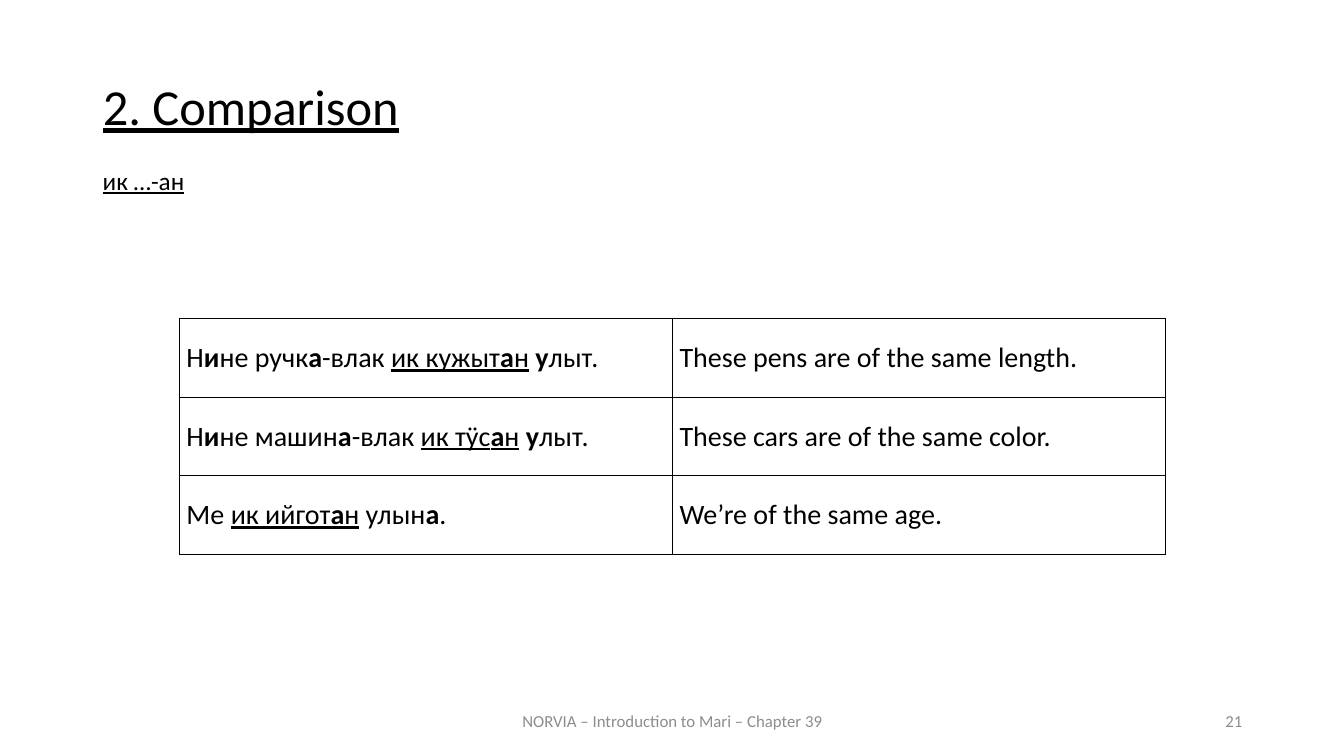
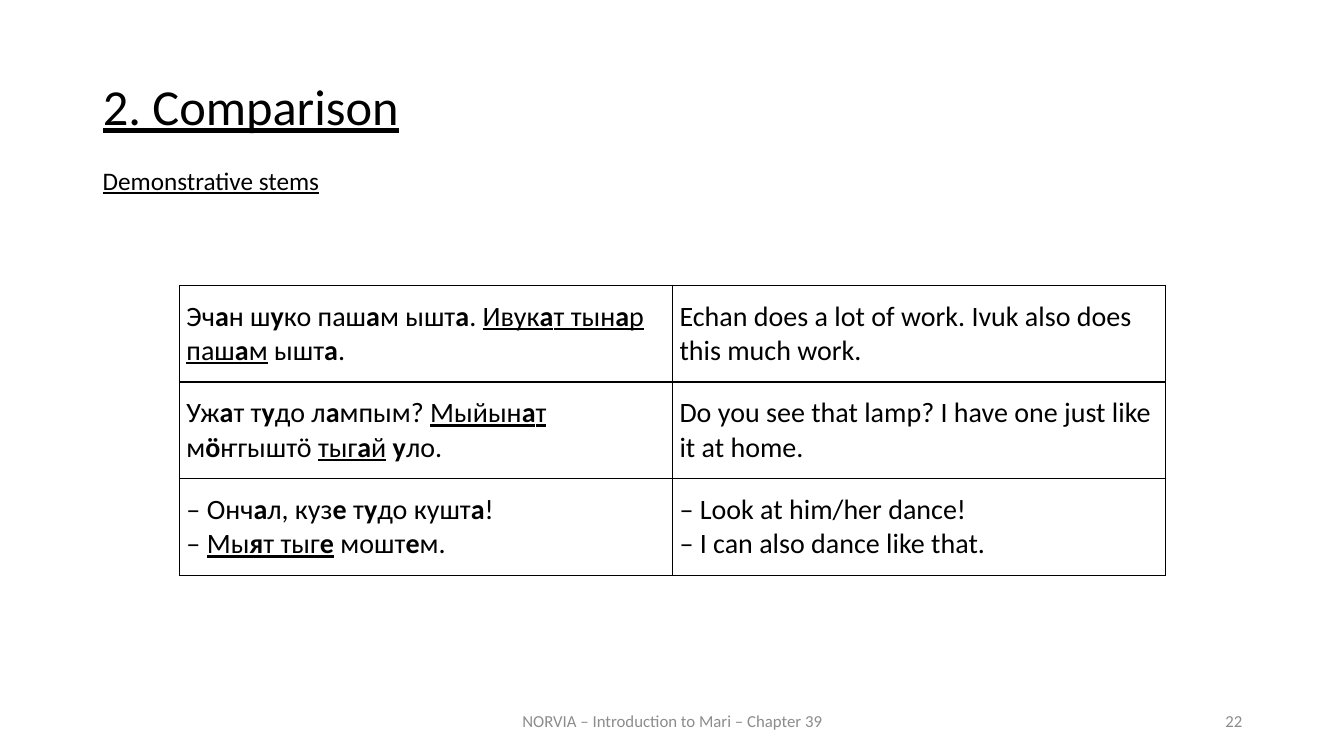
from lxml.etree import SubElement
from pptx import Presentation
from pptx.dml.color import RGBColor as Rgb
from pptx.enum.text import MSO_ANCHOR as Anchor, MSO_AUTO_SIZE as Fit, PP_ALIGN as Align
from pptx.oxml.ns import qn
from pptx.util import Inches, Pt

FONT, INK, GREY = "Calibri", "000000", "8C8C8C"
LEFT, WIDE = 0.92, 11.5
HEAD = "2. Comparison"
FOOT = "NORVIA – Introduction to Mari – Chapter 39"
FIRST = 21
SIDES = ("a:lnL", "a:lnR", "a:lnT", "a:lnB")

SLIDES = [
    ("ик …-ан", 3.16, 0.78, [
        ("Н*и*не ручк*а*-влак _ик кужыт*а*н_ *у*лыт.",
         "These pens are of the same length."),
        ("Н*и*не машин*а*-влак _ик тӱс*а*н_ *у*лыт.",
         "These cars are of the same color."),
        ("Ме _ик ийгот*а*н_ улын*а*.",
         "We’re of the same age."),
    ]),
    ("Demonstrative stems", 2.83, 0.96, [
        ("Эч*а*н ш*у*ко паш*а*м ышт*а*. _Ивук*а*т тын*а*р паш*а*м_ ышт*а*.",
         "Echan does a lot of work. Ivuk also does this much work."),
        ("Уж*а*т т*у*до л*а*мпым? _Мыйын*а*т_ м*ӧ*ҥгыштӧ _тыг*а*й_ *у*ло.",
         "Do you see that lamp? I have one just like it at home."),
        ("– Онч*а*л, куз*е* т*у*до кушт*а*!\n– _Мы*я*т тыг*е*_ мошт*е*м.",
         "– Look at him/her dance!\n– I can also dance like that."),
    ]),
]


def add_run(para, text, size, color=INK, bold=False, under=False):
    """Add one formatted run to a paragraph."""
    run = para.add_run()
    run.text = text
    font = run.font
    font.name, font.size = FONT, Pt(size)
    font.bold, font.underline = bold, under
    font.color.rgb = Rgb.from_string(color)


def add_marked(para, text, size):
    """Add runs from text where *...* is bold and _..._ is underlined."""
    for i, part in enumerate(text.split("_")):
        for j, bit in enumerate(part.split("*")):
            if bit:
                add_run(para, bit, size, bold=j % 2 == 1, under=i % 2 == 1)


def add_title(slide):
    """Fill and place the title placeholder."""
    title = slide.shapes.title
    title.left, title.top = Inches(LEFT), Inches(0.76)
    title.width, title.height = Inches(WIDE), Inches(0.83)
    frame = title.text_frame
    frame.vertical_anchor, frame.auto_size = Anchor.TOP, Fit.NONE
    para = frame.paragraphs[0]
    para.alignment, para.line_spacing, para.space_before = Align.LEFT, 0.9, Pt(12)
    add_run(para, HEAD, 36, under=True)


def add_label(slide, text, left, top, width, size, color=INK,
              align=Align.LEFT, anchor=Anchor.TOP, under=False):
    """Add a one-line text box."""
    box = slide.shapes.add_textbox(Inches(left), Inches(top), Inches(width), Inches(0.4))
    frame = box.text_frame
    frame.word_wrap, frame.vertical_anchor = True, anchor
    para = frame.paragraphs[0]
    para.alignment = align
    add_run(para, text, size, color, under=under)


def add_footer(slide, number):
    """Add the course line and the slide number."""
    add_label(slide, FOOT, 4.42, 6.95, 4.5, 12, GREY, Align.CENTER, Anchor.MIDDLE)
    add_label(slide, str(number), 9.42, 6.95, 3, 12, GREY, Align.RIGHT, Anchor.MIDDLE)


def set_border(cell):
    """Draw a thin line on all four sides of a cell."""
    props = cell._tc.get_or_add_tcPr()
    for pos, side in enumerate(SIDES):
        line = SubElement(props, qn(side), w=str(Pt(1)))
        fill = SubElement(line, qn("a:solidFill"))
        SubElement(fill, qn("a:srgbClr"), val=INK)
        props.remove(line)
        props.insert(pos, line)


def fill_cell(cell, text):
    """Format a cell and write its marked lines."""
    cell.fill.background()
    set_border(cell)
    cell.vertical_anchor = Anchor.MIDDLE
    cell.margin_left = cell.margin_right = Inches(0.07)
    cell.margin_top = cell.margin_bottom = 0
    frame = cell.text_frame
    for i, line in enumerate(text.split("\n")):
        para = frame.add_paragraph() if i else frame.paragraphs[0]
        add_marked(para, line, 20)


def add_pairs(slide, top, high, pairs):
    """Add the table of sentences and translations."""
    table = slide.shapes.add_table(
        len(pairs), 2, Inches(1.78), Inches(top),
        Inches(9.78), Inches(high * len(pairs))).table
    table.first_row = table.horz_banding = False
    for r, pair in enumerate(pairs):
        table.rows[r].height = Inches(high)
        for c, text in enumerate(pair):
            fill_cell(table.cell(r, c), text)


def main():
    """Build and save the slides."""
    prs = Presentation()
    prs.slide_width, prs.slide_height = Inches(13.33), Inches(7.5)
    for number, (topic, top, high, pairs) in enumerate(SLIDES, FIRST):
        slide = prs.slides.add_slide(prs.slide_layouts.get_by_name("Title Only"))
        add_title(slide)
        add_footer(slide, number)
        add_label(slide, topic, LEFT, 1.59, 5.97, 18, under=True)
        add_pairs(slide, top, high, pairs)
    prs.save("out.pptx")


if __name__ == "__main__":
    main()
